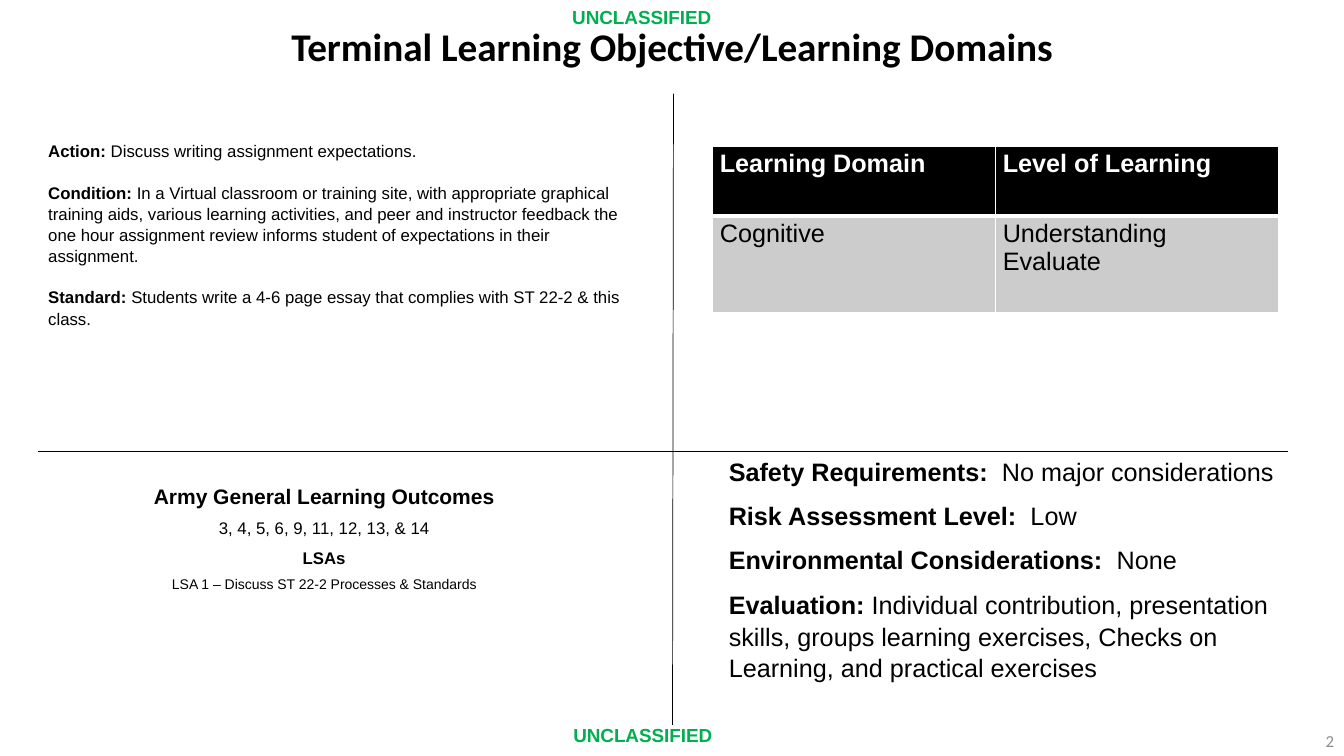
from lxml.etree import SubElement
from pptx import Presentation
from pptx.dml.color import RGBColor
from pptx.enum.shapes import MSO_CONNECTOR
from pptx.enum.text import MSO_ANCHOR, PP_ALIGN
from pptx.oxml.ns import qn
from pptx.util import Inches, Pt

# Content: each paragraph is a list of (text, bold, size) spans
TITLE = "Terminal Learning Objective/Learning Domains"
MARKING = "UNCLASSIFIED"
PAGE_NUMBER = "2"
OBJECTIVE = [
    [("Action:", True, 12), (" Discuss writing assignment expectations.", False, 12)],
    [("Condition:", True, 12),
     (" In a Virtual classroom or training site, with appropriate graphical training aids, "
      "various learning activities, and peer and instructor feedback the one hour assignment "
      "review informs student of expectations in their assignment.", False, 12)],
    [("Standard: ", True, 12),
     ("Students write a 4-6 page essay that complies with ST 22-2 & this class.", False, 12)],
]
CONSIDERATIONS = [
    [("Safety Requirements:  ", True, 18), ("No major considerations", False, 18)],
    [("Risk Assessment Level:  ", True, 18), ("Low", False, 18)],
    [("Environmental Considerations:  ", True, 18), ("None", False, 18)],
    [("Evaluation: ", True, 18),
     ("Individual contribution, presentation skills, groups learning exercises, "
      "Checks on Learning, and practical exercises", False, 18)],
]
OUTCOMES = [
    [("Army General Learning Outcomes", True, 15)],
    [("3, 4, 5, 6, 9, 11, 12, 13, & 14", False, 12)],
    [("LSAs", True, 12)],
    [("LSA 1 – Discuss ST 22-2 Processes & Standards", False, 10)],
]
DOMAINS = [
    [["Learning Domain"], ["Level of Learning"]],
    [["Cognitive"], ["Understanding", "Evaluate"]],
]

COLORS = {"text": "000000", "marking": "00B050", "number": "8C8C8C",
          "head": "000000", "body": "CCCCCC", "light": "FFFFFF"}

# Layout: left, top, width, height in percent of the slide
AREAS = {
    "title": (13.58, 2.8, 72.84, 7.33),
    "number": (77.5, 96, 22.5, 4),
    "considerations": (53.49, 59.47, 43.66, 31.6),
    "domains": (53.04, 19.33, 42.1, 22),
    "marking top": (10.35, 0.13, 74.8, 4.4),
    "marking bottom": (10.43, 95.07, 74.8, 4.4),
    "objective": (2.85, 17.87, 44.94, 25.6),
    "outcomes": (2.93, 63.33, 42.39, 16.13),
}
DIVIDERS = [(50.11, 12.4, 50.04, 95.87), (2.85, 59.73, 95.87, 59.73)]
ROW_SHARES = (9.2, 12.8)

deck = Presentation()
deck.slide_width, deck.slide_height = Inches(13.33), Inches(7.5)
page = deck.slides.add_slide(deck.slide_layouts[5])


def place(shares):
    sides = (deck.slide_width, deck.slide_height) * 2
    return [round(side * share / 100) for side, share in zip(sides, shares)]


def rgb(name):
    return RGBColor.from_string(COLORS[name])


def write(frame, paras, color="text", font="Arial", gap=0, **layout):
    """Fill a frame; gap is the space before a paragraph as a share of its size."""
    frame.word_wrap = True
    for index, spans in enumerate(paras):
        para = frame.paragraphs[0] if index == 0 else frame.add_paragraph()
        for key, value in layout.items():
            setattr(para, key, value)
        para.space_before = Pt(round(gap * spans[0][2], 1) if index else 0)
        for text, bold, size in spans:
            span = para.add_run()
            span.text = text
            span.font.color.rgb = rgb(color)
            for key, value in {"name": font, "size": Pt(size), "bold": bold}.items():
                setattr(span.font, key, value)


def add_text(area, paras, **style):
    box = page.shapes.add_textbox(*place(AREAS[area]))
    write(box.text_frame, paras, **style)
    return box


def add_border(cell, side, width):
    line = SubElement(cell._tc.get_or_add_tcPr(), qn(f"a:ln{side}"), w=str(Pt(width)))
    fill = SubElement(line, qn("a:solidFill"))
    SubElement(fill, qn("a:srgbClr"), val=COLORS["light"])


# Title
title = page.shapes.title
title.left, title.top, title.width, title.height = place(AREAS["title"])
title.text_frame.vertical_anchor = MSO_ANCHOR.MIDDLE
write(title.text_frame, [[(TITLE, True, 28)]], font="Calibri",
      alignment=PP_ALIGN.CENTER, line_spacing=0.9)

# Page number
number = add_text("number", [[(PAGE_NUMBER, False, 12)]], color="number",
                  font="Calibri", alignment=PP_ALIGN.RIGHT)
number.text_frame.vertical_anchor = MSO_ANCHOR.MIDDLE

# Quadrant dividers
for shares in DIVIDERS:
    divider = page.shapes.add_connector(MSO_CONNECTOR.STRAIGHT, *place(shares))
    divider.line.color.rgb = rgb("text")
    divider.line.width = Pt(0.5)
    SubElement(divider._element.spPr, qn("a:effectLst"))

# Quadrant texts
add_text("considerations", CONSIDERATIONS, gap=0.5, line_spacing=1.05)
add_text("objective", OBJECTIVE, gap=1.2, line_spacing=1.05)
add_text("outcomes", OUTCOMES, gap=0.55, alignment=PP_ALIGN.CENTER)

# Learning domain table
table = page.shapes.add_table(len(DOMAINS), len(DOMAINS[0]),
                              *place(AREAS["domains"])).table
for row, share in zip(table.rows, ROW_SHARES):
    row.height = round(deck.slide_height * share / 100)
for r, row in enumerate(DOMAINS):
    head = r == 0
    for c, lines in enumerate(row):
        cell = table.cell(r, c)
        cell.margin_left = cell.margin_right = Inches(0.07)
        cell.margin_top = cell.margin_bottom = Inches(0.04)
        for side, width in {"L": 1, "R": 1, "T": 1 if head else 3,
                            "B": 3 if head else 1}.items():
            add_border(cell, side, width)
        cell.fill.solid()
        cell.fill.fore_color.rgb = rgb("head" if head else "body")
        write(cell.text_frame, [[(line, head, 18)] for line in lines],
              color="light" if head else "text")

# Classification markings
for area in ("marking top", "marking bottom"):
    add_text(area, [[(MARKING, True, 13.5)]], color="marking", alignment=PP_ALIGN.CENTER)

deck.save("out.pptx")
